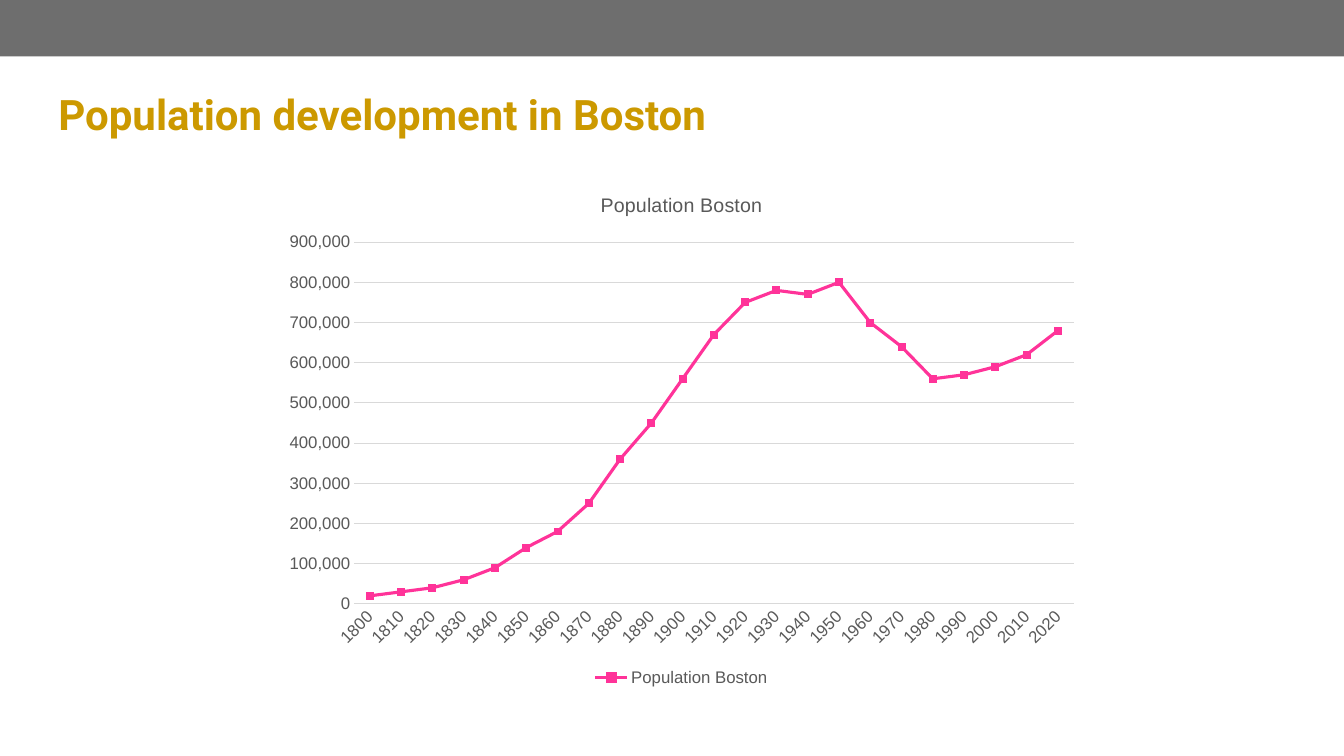
"""Build a slide with a line chart of Boston's population from 1800 to 2020."""
from pptx import Presentation
from pptx.chart.data import CategoryChartData
from pptx.dml.color import RGBColor
from pptx.enum.chart import XL_CHART_TYPE, XL_LEGEND_POSITION, XL_TICK_MARK
from pptx.enum.shapes import MSO_SHAPE
from pptx.util import Inches, Pt

LINE_CHART = XL_CHART_TYPE.LINE
LEGEND_BOTTOM = XL_LEGEND_POSITION.BOTTOM
NO_TICKS = XL_TICK_MARK.NONE
RECTANGLE = MSO_SHAPE.RECTANGLE

BAND_GRAY = RGBColor(0x6E, 0x6E, 0x6E)
GOLD = RGBColor(0xCC, 0x99, 0x00)
TEXT_GRAY = RGBColor(0x59, 0x59, 0x59)
GRID_GRAY = RGBColor(0xD9, 0xD9, 0xD9)
PINK = RGBColor(0xFF, 0x33, 0x99)

SERIES_NAME = "Population Boston"
POPULATION = [
    20000, 30000, 40000, 60000, 90000, 140000, 180000, 250000,
    360000, 450000, 560000, 670000, 750000, 780000, 770000, 800000,
    700000, 640000, 560000, 570000, 590000, 620000, 680000,
]


def style_font(font, color, **formats):
    for attribute, value in formats.items():
        setattr(font, attribute, value)
    font.color.rgb = color


def style_line(line, color, width):
    line.color.rgb = color
    line.width = Pt(width)


deck = Presentation()
deck.slide_width, deck.slide_height = Inches(13.33), Inches(7.5)
slide = deck.slides.add_slide(deck.slide_layouts[6])

band = slide.shapes.add_shape(RECTANGLE, 0, 0, deck.slide_width, Inches(0.56))
band.shadow.inherit = False
band.fill.solid()
band.fill.fore_color.rgb = BAND_GRAY
band.line.fill.background()

heading = slide.shapes.add_textbox(Inches(0.48), Inches(0.83), Inches(12.38), Inches(1.1))
heading.text_frame.word_wrap = True
heading_run = heading.text_frame.paragraphs[0].add_run()
heading_run.text = "Population development in Boston"
style_font(heading_run.font, GOLD, name="Roboto", size=Pt(30), bold=True)

census = CategoryChartData(number_format="#,##0")
census.categories = [str(year) for year in range(1800, 2021, 10)]
census.add_series(SERIES_NAME, POPULATION)
chart = slide.shapes.add_chart(
    LINE_CHART, Inches(2.71), Inches(1.72), Inches(8.1), Inches(5.13), census
).chart
chart.font.name = "Arial"
chart.font.size = Pt(10)

chart.has_title = True
chart_title = chart.chart_title.text_frame
chart_title.text = SERIES_NAME
style_font(chart_title.paragraphs[0].runs[0].font, TEXT_GRAY,
           name="Arial", size=Pt(14), bold=False)

chart.has_legend = True
chart.legend.position = LEGEND_BOTTOM
chart.legend.include_in_layout = False

years, people = chart.category_axis, chart.value_axis
for labels in (years.tick_labels, people.tick_labels, chart.legend):
    style_font(labels.font, TEXT_GRAY, name="Arial", size=Pt(12), bold=False)
for axis in (years, people):
    axis.major_tick_mark = axis.minor_tick_mark = NO_TICKS

style_line(years.format.line, GRID_GRAY, 0.75)
years._element.txPr.bodyPr.set("rot", "-2700000")

people.minimum_scale, people.maximum_scale, people.major_unit = 0, 900000, 100000
people.tick_labels.number_format = "#,##0"
people.tick_labels.number_format_is_linked = False
people.format.line.fill.background()
people.has_major_gridlines = True
style_line(people.major_gridlines.format.line, GRID_GRAY, 0.75)

plot = chart.plots[0]
plot.vary_by_categories = False
population = plot.series[0]
population.smooth = False
population.marker.style = None
style_line(population.format.line, PINK, 2.25)

deck.save("out.pptx")
